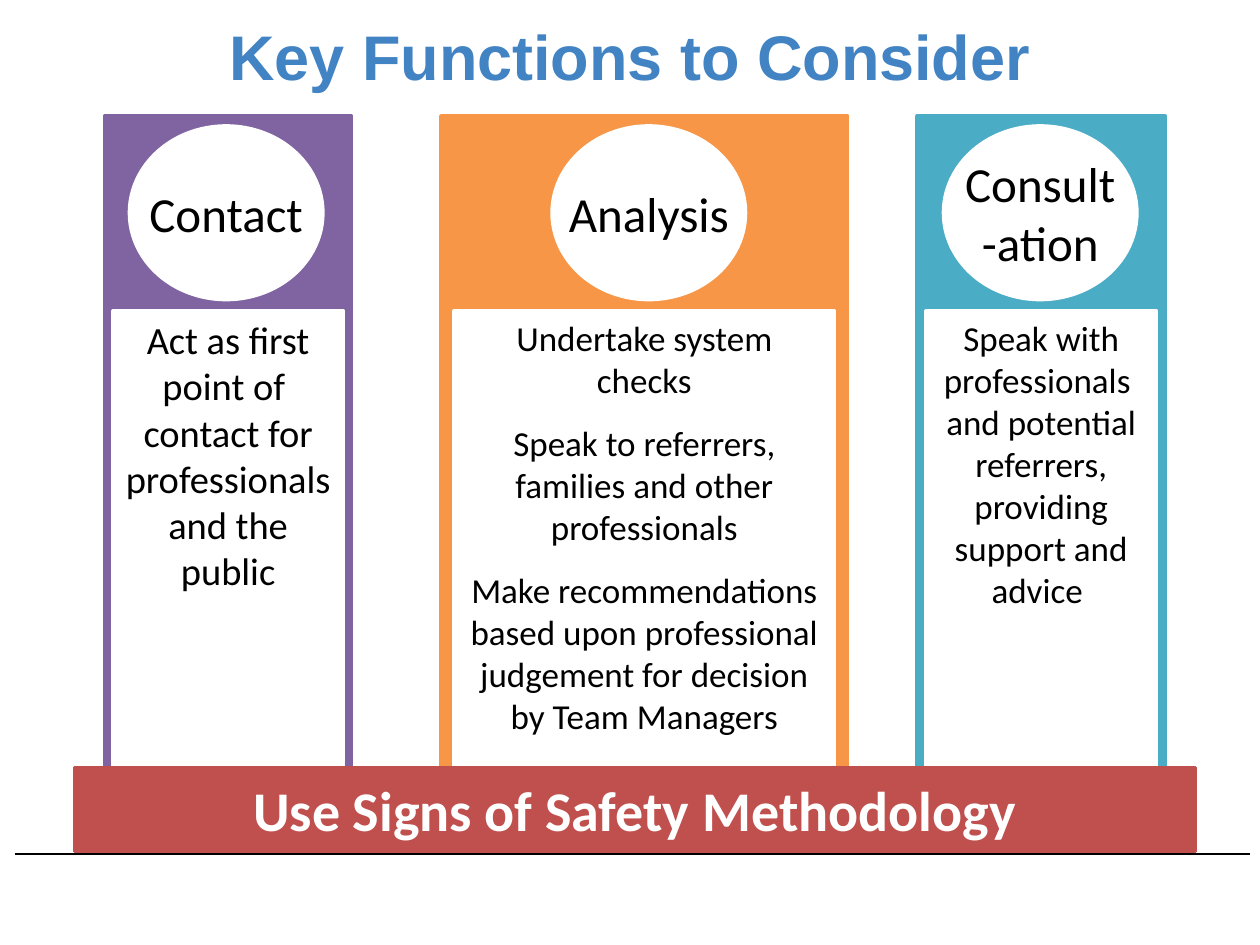
from dataclasses import dataclass

from lxml import etree
from pptx import Presentation, util as u
from pptx.dml.color import RGBColor
from pptx.enum import shapes, text
from pptx.oxml.ns import qn


@dataclass(frozen=True)
class Theme:
    blue: str = "4283C4"
    purple: str = "8064A2"
    orange: str = "F79646"
    teal: str = "4BACC6"
    red: str = "C0504D"
    white: str = "FFFFFF"
    black: str = "000000"
    head: str = "Arial"
    body: str = "Calibri"
    title: int = 36
    base: int = 32
    label: int = 28
    large: int = 22
    small: int = 20
    edge: int = 2
    rule: int = 1


class Deck:
    def __init__(self, theme, wide, high):
        self.theme = theme
        self.prs = Presentation()
        self.prs.slide_width, self.prs.slide_height = u.Cm(wide), u.Cm(high)
        self.slide = self.prs.slides.add_slide(self.prs.slide_layouts[6])

    def line(self, x1, x2, y):
        rule = self.slide.shapes.add_connector(
            shapes.MSO_CONNECTOR.STRAIGHT, u.Cm(x1), u.Cm(y), u.Cm(x2), u.Cm(y))
        rule.line.color.rgb = RGBColor.from_string(self.theme.black)
        rule.line.width = u.Pt(self.theme.rule)
        etree.SubElement(rule.element.spPr, qn("a:effectLst"))

    def shape(self, kind, box, tint):
        item = self.slide.shapes.add_shape(kind, *map(u.Cm, box))
        item.shadow.inherit = False
        item.fill.solid()
        item.fill.fore_color.rgb = RGBColor.from_string(tint)
        item.line.color.rgb = RGBColor.from_string(tint)
        item.line.width = u.Pt(self.theme.edge)

    def text(self, words, box, size, tint=None, bold=False, face=None,
             anchor=text.MSO_ANCHOR.MIDDLE, gap=0):
        """Add centred text; gap is the space in points between paragraphs."""
        frame = self.slide.shapes.add_textbox(*map(u.Cm, box)).text_frame
        frame.word_wrap = True
        frame.vertical_anchor = anchor
        frame.text = words
        for i, para in enumerate(frame.paragraphs):
            para.alignment = text.PP_ALIGN.CENTER
            para.space_before = u.Pt(gap if i else 0)
            for run in para.runs:
                run.font.size = u.Pt(size)
                run.font.bold = bold
                run.font.name = face or self.theme.body
                run.font.color.rgb = RGBColor.from_string(tint or self.theme.black)

    def pillar(self, left, wide, inner, mid, tint, label, words, size):
        """Add a coloured column with a round heading and a white panel."""
        rect, oval = shapes.MSO_SHAPE.RECTANGLE, shapes.MSO_SHAPE.OVAL
        side = left + (wide - inner) / 2
        self.shape(rect, (left, 2.34, wide, 14), tint)
        self.shape(rect, (side, 6.27, inner, 9.86), self.theme.white)
        self.shape(oval, (mid - 1.95, 2.54, 3.9, 3.5), self.theme.white)
        self.text(label, (mid - 2, 2.54, 4, 3.5), self.theme.label)
        self.text(words, (side, 6.25, inner, 8.8), size,
                  anchor=text.MSO_ANCHOR.TOP, gap=12)


def main():
    look = Theme()
    deck = Deck(look, 25.4, 19.05)
    deck.line(0.3, 25.2, 17.22)
    deck.text("Key Functions to Consider", (1.27, -0.48, 22.86, 3.18),
              look.title, look.blue, True, look.head)

    pillars = [
        (2.11, 4.98, 4.65, 4.56, look.purple, "Contact",
         "Act as first point of \vcontact for professionals and the public",
         look.large),
        (8.89, 8.2, 7.67, 13.08, look.orange, "Analysis",
         "Undertake system checks\n"
         "Speak to referrers, families and other professionals\n"
         "Make recommendations based upon professional judgement "
         "for decision by Team Managers", look.small),
        (18.49, 5, 4.65, 20.97, look.teal, "Consult\v-ation",
         "Speak with professionals \vand potential referrers, "
         "providing support and advice ", look.small),
    ]
    for pillar in pillars:
        deck.pillar(*pillar)

    base = (1.5, 15.47, 22.6, 1.7)
    deck.shape(shapes.MSO_SHAPE.RECTANGLE, base, look.red)
    deck.text("Use Signs of Safety Methodology", base, look.base, look.white, True)
    deck.prs.save("out.pptx")


if __name__ == "__main__":
    main()
